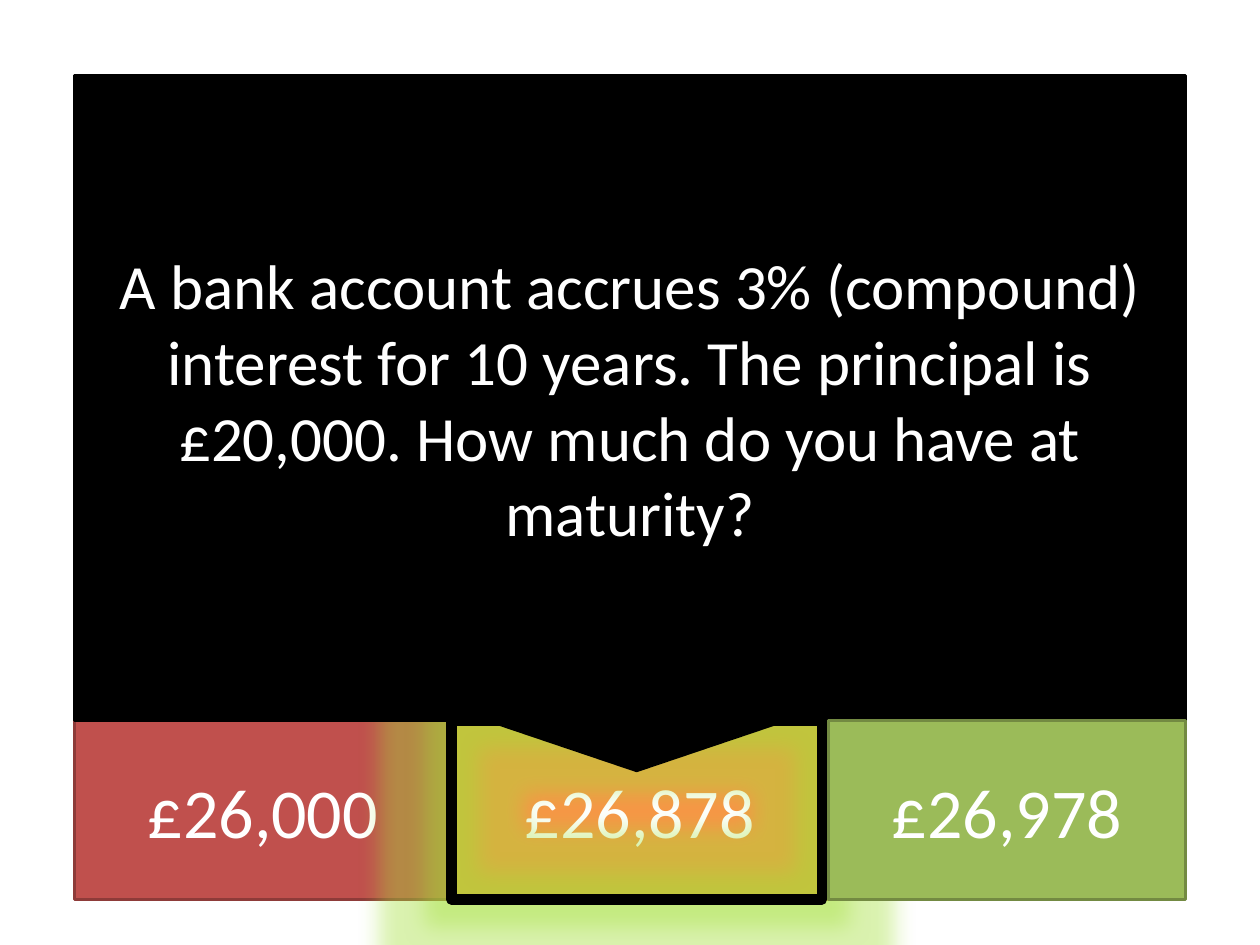
from lxml import etree
from pptx import Presentation
from pptx import util as u
from pptx.dml.color import RGBColor
from pptx.enum import shapes, text
from pptx.oxml.ns import qn

COLOURS = {
    "black": "000000", "white": "FFFFFF", "glow": "A3E039",
    "red": "C0504D", "red edge": "8E3B39",
    "orange": "F79646", "orange edge": "B76F34",
    "green": "9BBB59", "green edge": "738A42",
}
LEFT, BOARD_TOP, ANSWER_TOP = 1.5, 1.52, 14.53
BOARD_WIDTH, ANSWER_HEIGHT = 22.4, 3.6
MIDDLE, RIGHT = 9.1, 16.7


class QuizSlide:
    font = {"name": "Calibri"}
    frame = {"word_wrap": True, "vertical_anchor": text.MSO_ANCHOR.MIDDLE}

    def __init__(self, presentation):
        self.slide = presentation.slides.add_slide(presentation.slide_layouts[6])

    @staticmethod
    def apply(target, values):
        for name, value in values.items():
            setattr(target, name, value)

    def box(self, place, fill, edge, line_width=2, kind="RECTANGLE", parent=None):
        """Draw a preset shape; a fill of None leaves it hollow."""
        owner = parent or self.slide
        shape = owner.shapes.add_shape(
            getattr(shapes.MSO_SHAPE, kind), *(u.Cm(length) for length in place))
        shape.shadow.inherit = False
        if fill:
            shape.fill.solid()
            shape.fill.fore_color.rgb = RGBColor.from_string(COLOURS[fill])
        else:
            shape.fill.background()
        shape.line.color.rgb = RGBColor.from_string(COLOURS[edge])
        shape.line.width = u.Pt(line_width)
        return shape

    def text_box(self, place, words, size, fill, edge):
        shape = self.box(place, fill, edge)
        self.apply(shape.text_frame, self.frame)
        paragraph = shape.text_frame.paragraphs[0]
        paragraph.alignment = text.PP_ALIGN.CENTER
        run = paragraph.add_run()
        run.text = words
        self.apply(run.font, {**self.font, "size": u.Pt(size)})
        run.font.color.rgb = RGBColor.from_string(COLOURS["white"])

    def glow(self, shape, radius, opacity):
        effects = shape._element.spPr.find(qn("a:effectLst"))
        glow = etree.SubElement(effects, qn("a:glow"), rad=str(u.Cm(radius)))
        colour = etree.SubElement(glow, qn("a:srgbClr"), val=COLOURS["glow"])
        etree.SubElement(colour, qn("a:alpha"), val=str(opacity * 1000))

    def marker(self, left, width):
        """Frame the right answer with a glowing border and a pointer."""
        group = self.slide.shapes.add_group_shape()
        border = self.box((left, ANSWER_TOP, width, ANSWER_HEIGHT),
                          None, "black", 6, parent=group)
        self.glow(border, 0.9, 40)
        pointer_width = 5.92
        pointer = self.box((left + (width - pointer_width) / 2, ANSWER_TOP, pointer_width, 1),
                           "black", "black", kind="ISOSCELES_TRIANGLE", parent=group)
        pointer.rotation = 180

    def answer(self, left, width, words, colour):
        self.text_box((left, ANSWER_TOP, width, ANSWER_HEIGHT),
                      words, 40, colour, f"{colour} edge")


def main():
    presentation = Presentation()
    presentation.slide_width, presentation.slide_height = u.Cm(25.4), u.Cm(19.05)
    quiz = QuizSlide(presentation)
    quiz.answer(MIDDLE, RIGHT - MIDDLE, "£26,878", "orange")
    quiz.answer(LEFT, MIDDLE - LEFT, "£26,000", "red")
    quiz.marker(MIDDLE, 7.47)
    quiz.text_box(
        (LEFT, BOARD_TOP, BOARD_WIDTH, ANSWER_TOP - BOARD_TOP),
        "A bank account accrues 3% (compound) interest for 10 years. "
        "The principal is £20,000. How much do you have at maturity?",
        36, "black", "black")
    quiz.answer(RIGHT, LEFT + BOARD_WIDTH - RIGHT, "£26,978", "green")
    presentation.save("out.pptx")


if __name__ == "__main__":
    main()
